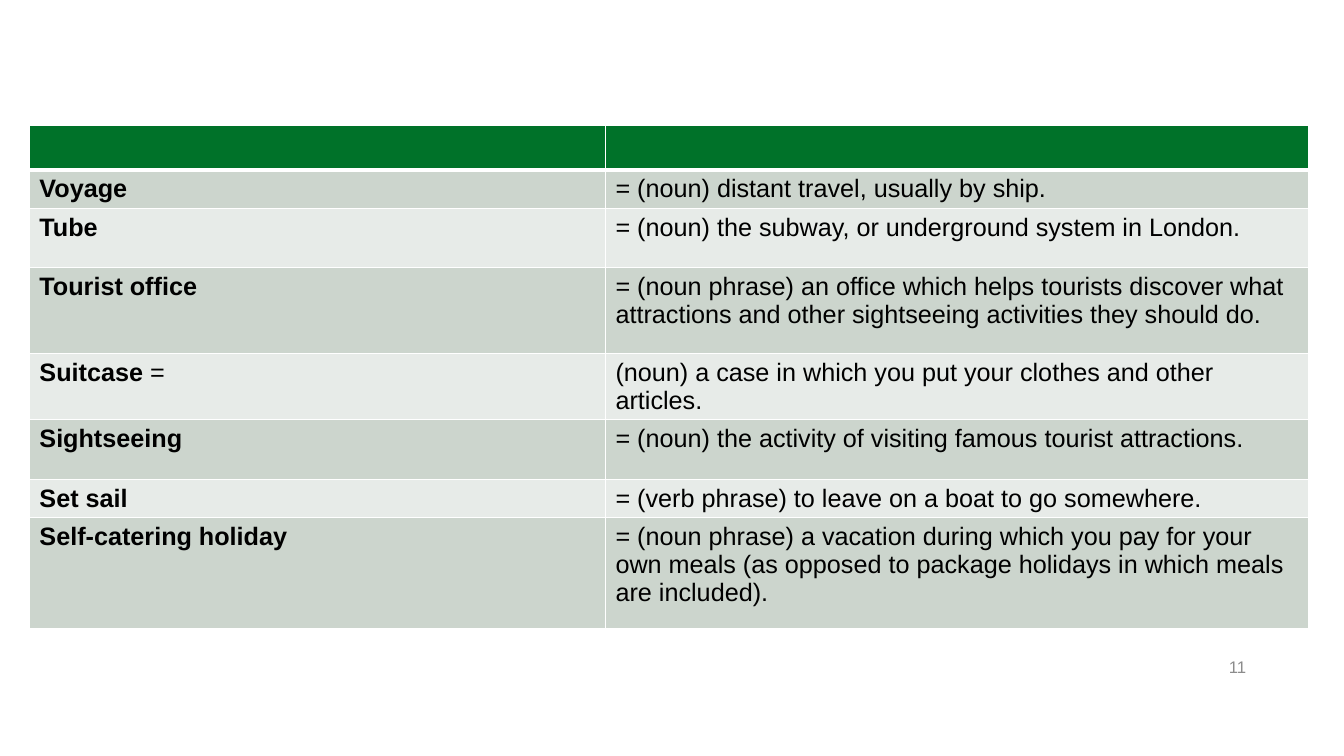
import pptx
import pptx.util
import pptx.dml.color
import pptx.enum.text
import pptx.oxml
import pptx.oxml.ns

Pt = pptx.util.Pt

GLOSSARY = [
    ("", "", ""),
    ("Voyage", "", "= (noun) distant travel, usually by ship."),
    ("Tube", "", "= (noun) the subway, or underground system in London."),
    ("Tourist office", "", "= (noun phrase) an office which helps tourists discover what "
     "attractions and other sightseeing activities they should do."),
    ("Suitcase", " =", "(noun) a case in which you put your clothes and other articles."),
    ("Sightseeing", "", "= (noun) the activity of visiting famous tourist attractions."),
    ("Set sail", "", "= (verb phrase) to leave on a boat to go somewhere."),
    ("Self-catering holiday", "", "= (noun phrase) a vacation during which you pay for your "
     "own meals (as opposed to package holidays in which meals are included)."),
]
PAGE_NUMBER = "11"

COLUMN_WIDTHS = [411.5, 502]
ROW_HEIGHTS = [32, 24.5, 42.5, 61, 42.5, 42.5, 24.5, 79]
TABLE_LEFT, TABLE_TOP = 21, 89.5
HEADER_FILL = "007229"
BAND_FILLS = ["E7EBE8", "CCD5CD"]
BORDER_COLOR = "FFFFFF"


def color(code):
    return pptx.dml.color.RGBColor.from_string(code)


def add_text(para, text, size=18, bold=False, ink="000000"):
    span = para.add_run()
    span.text = text
    span.font.name = "Arial"
    span.font.size = Pt(size)
    span.font.bold = bold
    span.font.color.rgb = color(ink)


def set_borders(cell, widths):
    properties = cell._tc.get_or_add_tcPr()
    for position, (side, width) in enumerate(widths.items()):
        line = pptx.oxml.parse_xml(
            f'<a:{side} {pptx.oxml.ns.nsdecls("a")} w="{Pt(width)}"><a:solidFill>'
            f'<a:srgbClr val="{BORDER_COLOR}"/></a:solidFill></a:{side}>')
        properties.insert(position, line)


def add_glossary(page):
    frame = page.shapes.add_table(
        len(GLOSSARY), len(COLUMN_WIDTHS), Pt(TABLE_LEFT), Pt(TABLE_TOP),
        Pt(sum(COLUMN_WIDTHS)), Pt(sum(ROW_HEIGHTS)))
    table = frame.table
    for column, width in zip(table.columns, COLUMN_WIDTHS):
        column.width = Pt(width)
    for index, (term, suffix, meaning) in enumerate(GLOSSARY):
        row = table.rows[index]
        row.height = Pt(ROW_HEIGHTS[index])
        for cell in row.cells:
            cell.fill.solid()
            cell.fill.fore_color.rgb = color(BAND_FILLS[index % 2] if index else HEADER_FILL)
            set_borders(cell, {"lnL": 1, "lnR": 1, "lnT": 3 if index == 1 else 1,
                               "lnB": 3 if index == 0 else 1})
        term_para, meaning_para = [cell.text_frame.paragraphs[0] for cell in row.cells]
        if term:
            add_text(term_para, term, bold=True)
        if suffix:
            add_text(term_para, suffix)
        if meaning:
            add_text(meaning_para, meaning)


def add_page_number(page):
    box = page.shapes.add_textbox(Pt(862.5), Pt(462), Pt(43), Pt(29))
    box.text_frame.word_wrap = True
    box.text_frame.vertical_anchor = pptx.enum.text.MSO_ANCHOR.MIDDLE
    para = box.text_frame.paragraphs[0]
    para.alignment = pptx.enum.text.PP_ALIGN.CENTER
    add_text(para, PAGE_NUMBER, size=12, ink="8C8C8C")


def main():
    deck = pptx.Presentation()
    deck.slide_width, deck.slide_height = Pt(960), Pt(540)
    page = deck.slides.add_slide(deck.slide_layouts[6])
    add_glossary(page)
    add_page_number(page)
    deck.save("out.pptx")


if __name__ == "__main__":
    main()
